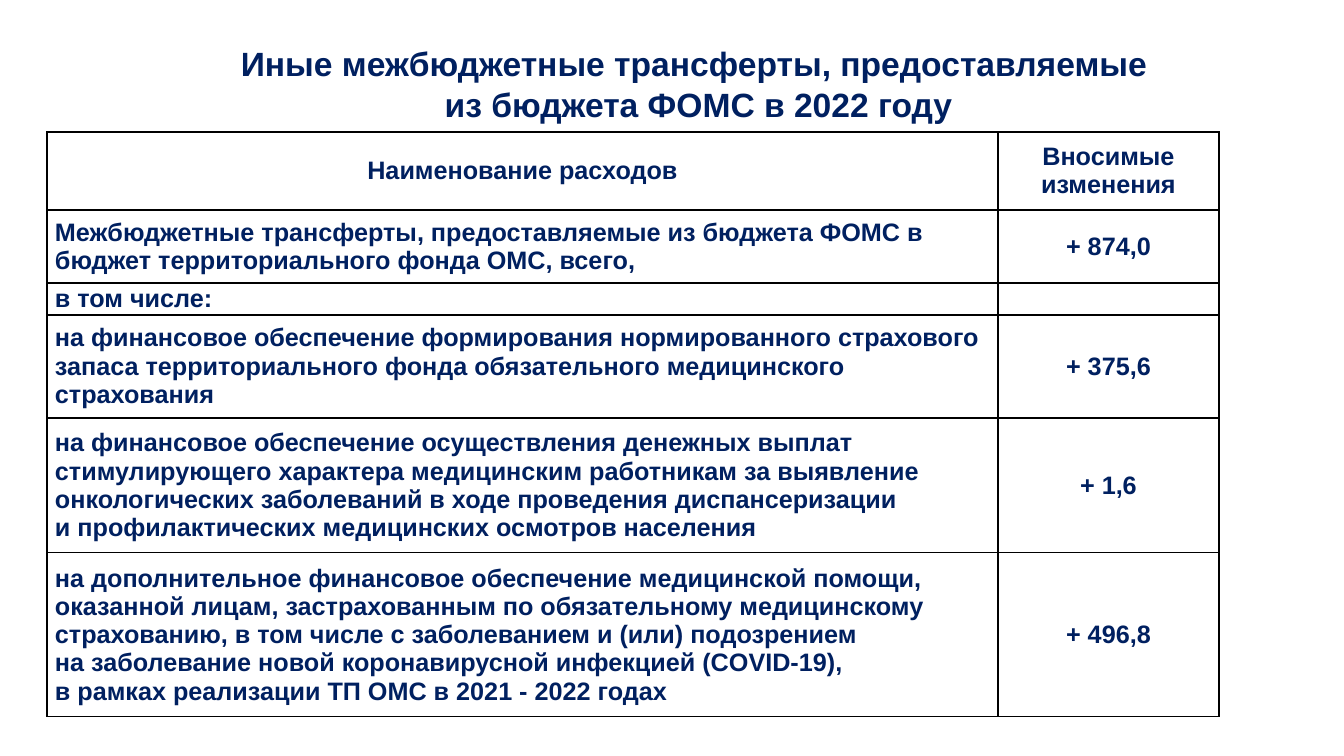
from pptx import Presentation
from pptx import util as u
from pptx.dml.color import RGBColor
from pptx.enum import text
from pptx.oxml import parse_xml
from pptx.oxml.ns import nsdecls

# Content
TITLE = "Иные межбюджетные трансферты, предоставляемые \nиз бюджета ФОМС в 2022 году"
ROWS = [
    ("Наименование расходов", "Вносимые изменения"),
    ("Межбюджетные трансферты, предоставляемые из бюджета ФОМС в бюджет "
     "территориального фонда ОМС, всего,", "+ 874,0"),
    ("в том числе:", ""),
    ("на финансовое обеспечение формирования нормированного страхового запаса "
     "территориального фонда обязательного медицинского страхования", "+ 375,6"),
    ("на финансовое обеспечение осуществления денежных выплат стимулирующего "
     "характера медицинским работникам за выявление онкологических заболеваний "
     "в ходе проведения диспансеризации \n"
     "и профилактических медицинских осмотров населения", "+ 1,6"),
    ("на дополнительное финансовое обеспечение медицинской помощи, оказанной "
     "лицам, застрахованным по обязательному медицинскому страхованию, "
     "в том числе с заболеванием и (или) подозрением \n"
     "на заболевание новой коронавирусной инфекцией (COVID-19), \n"
     "в рамках реализации ТП ОМС в 2021 - 2022 годах", "+ 496,8"),
]
WIDTHS = [951, 221]
HEIGHTS = [78, 73, 32, 103, 135, 164]
NAVY, BLACK = "002060", "000000"
LEFT, CENTER = text.PP_ALIGN.LEFT, text.PP_ALIGN.CENTER


def px(n):
    return u.Emu(round(n * 914400 / 100.8))


def color(code):
    return RGBColor.from_string(code)


def write(par, words, size, align):
    par.text = words
    par.alignment = align
    par.line_spacing = 1.0
    font = par.font
    font.name, font.size, font.bold = "Arial", u.Pt(size), True
    font.color.rgb = color(NAVY)


def border(cell):
    props = cell._tc.get_or_add_tcPr()
    for n, side in enumerate(("lnL", "lnR", "lnT", "lnB")):
        props.insert(n, parse_xml(
            f'<a:{side} {nsdecls("a")} w="12700"><a:solidFill>'
            f'<a:srgbClr val="{BLACK}"/></a:solidFill></a:{side}>'))


deck = Presentation()
deck.slide_width, deck.slide_height = px(1344), px(756)
slide = deck.slides.add_slide(deck.slide_layouts[5])

# Title
title = slide.shapes.title
title.left, title.top, title.width, title.height = map(px, (101, 36, 1195, 95))
title.text_frame.vertical_anchor = text.MSO_ANCHOR.MIDDLE
write(title.text_frame.paragraphs[0], TITLE, 24, CENTER)

# Table of transfers
table = slide.shapes.add_table(len(ROWS), len(WIDTHS), px(47), px(132),
                               px(sum(WIDTHS)), px(sum(HEIGHTS))).table
table.first_row = table.horz_banding = False
for col, width in zip(table.columns, WIDTHS):
    col.width = px(width)
for r, (row, height) in enumerate(zip(ROWS, HEIGHTS)):
    table.rows[r].height = px(height)
    for c, words in enumerate(row):
        cell = table.cell(r, c)
        cell.margin_left = cell.margin_right = px(8)
        cell.margin_top = cell.margin_bottom = 0
        cell.vertical_anchor = text.MSO_ANCHOR.MIDDLE
        cell.fill.background()
        border(cell)
        write(cell.text_frame.paragraphs[0], words, 18,
              LEFT if r and not c else CENTER)

deck.save("out.pptx")
